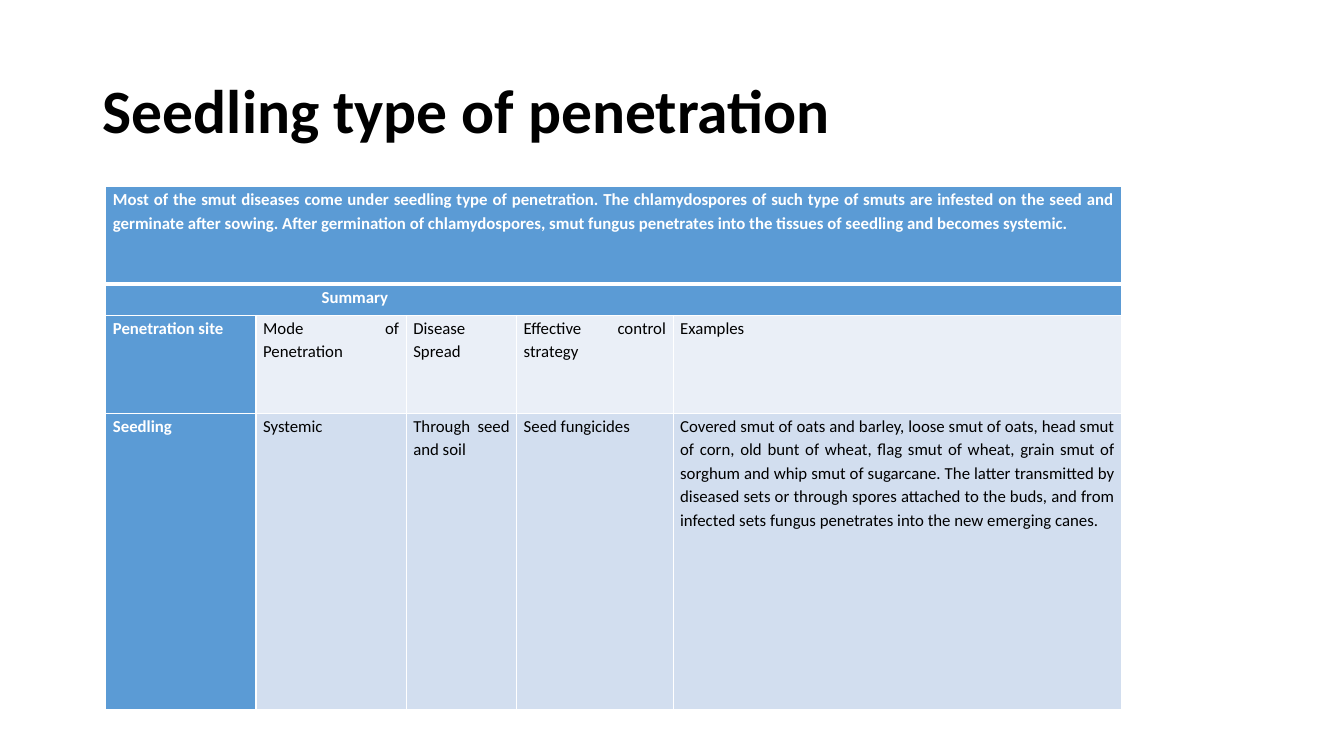
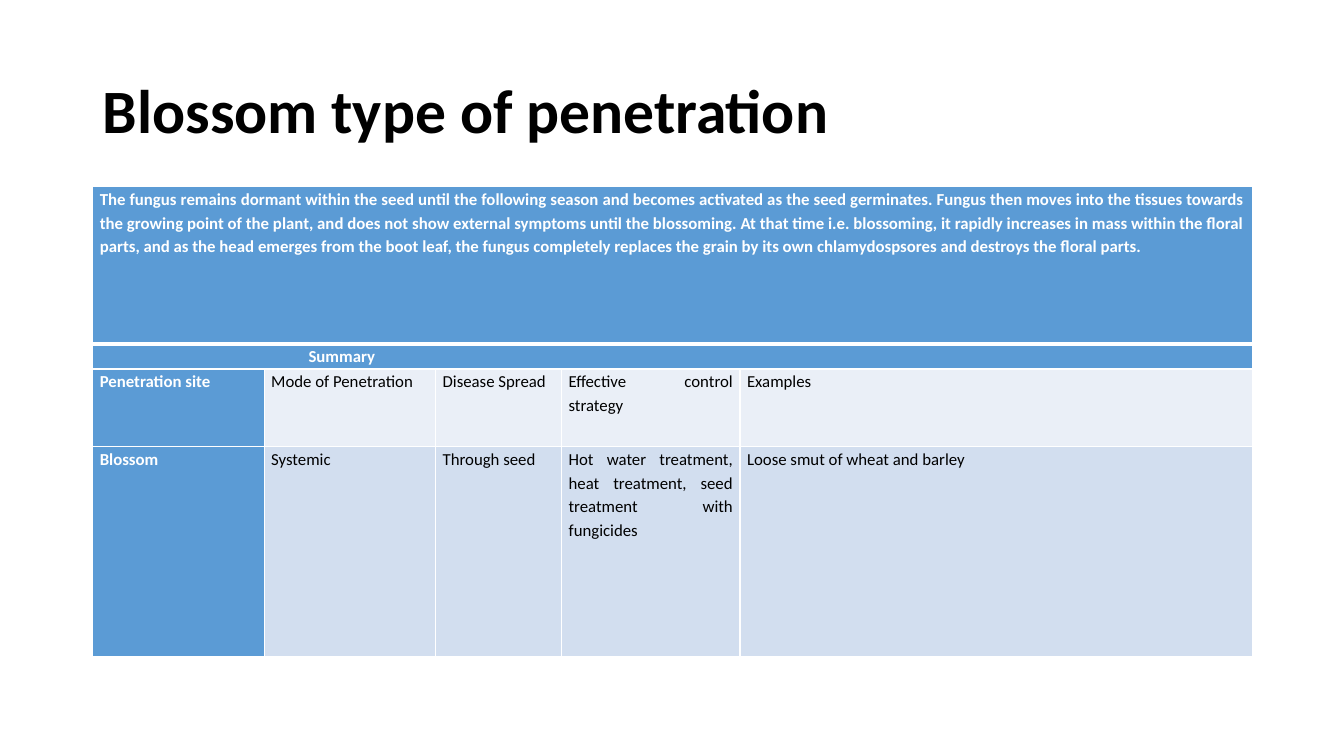
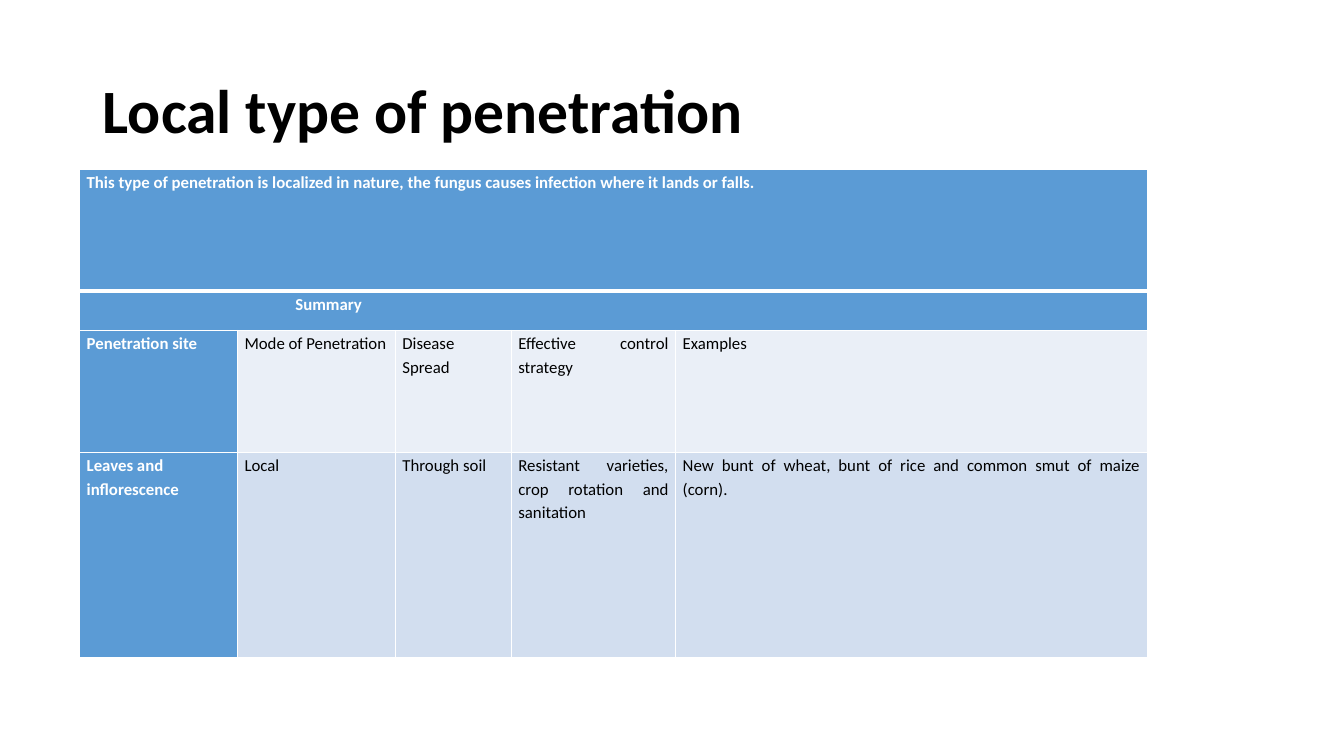
from dataclasses import dataclass

from lxml import etree
from pptx import Presentation
from pptx.dml.color import RGBColor
from pptx.enum import text as t
from pptx.oxml import ns
from pptx.util import Inches, Pt


@dataclass(frozen=True)
class Theme:
    font: str = "Calibri"
    title_size: int = 44
    body_size: int = 12
    dark: str = "000000"
    white: str = "FFFFFF"
    accent: str = "5B9BD5"
    pale: str = "EAEFF7"
    tint: str = "D2DEEF"
    rule: int = 1
    heavy_rule: int = 3


THEME = Theme()
LEFT, JUSTIFY = t.PP_ALIGN.LEFT, t.PP_ALIGN.JUSTIFY
TITLE_AREA = (0.92, 0.4, 11.5, 1.45)
COLUMN_WEIGHTS = (1.7, 1.7, 1.25, 1.77, 5.08)
CELL_INSET = 0.07
SUMMARY_INSET = 2.14
HEADINGS = ("Penetration site", "Mode of Penetration", "Disease Spread",
            "Effective control strategy", "Examples")

# Each topic: title, table area (left, top, width), row heights, intro, findings
TOPICS = (
    ("Seedling type of penetration", (1.05, 1.85, 10.08), (0.97, 0.31, 0.97, 2.94),
     "Most of the smut diseases come under seedling type of penetration. The "
     "chlamydospores of such type of smuts are infested on the seed and germinate "
     "after sowing. After germination of chlamydospores, smut fungus penetrates "
     "into the tissues of seedling and becomes systemic.",
     ("Seedling", "Systemic", "Through seed and soil", "Seed fungicides",
      "Covered smut of oats and barley, loose smut of oats, head smut of corn, old "
      "bunt of wheat, flag smut of wheat, grain smut of sorghum and whip smut of "
      "sugarcane. The latter transmitted by diseased sets or through spores attached "
      "to the buds, and from infected sets fungus penetrates into the new emerging "
      "canes.")),
    ("Blossom type of penetration", (0.92, 1.85, 11.5), (1.56, 0.25, 0.77, 2.08),
     "The fungus remains dormant within the seed until the following season and "
     "becomes activated as the seed germinates. Fungus then moves into the tissues "
     "towards the growing point of the plant, and does not show external symptoms "
     "until the blossoming. At that time i.e. blossoming, it rapidly increases in "
     "mass within the floral parts, and as the head emerges from the boot leaf, the "
     "fungus completely replaces the grain by its own chlamydospsores and destroys "
     "the floral parts.",
     ("Blossom", "Systemic", "Through seed",
      "Hot water treatment, heat treatment, seed treatment with fungicides",
      "Loose smut of wheat and barley")),
    ("Local type of penetration", (0.79, 1.68, 10.59), (1.21, 0.39, 1.21, 2.03),
     "This type of penetration is localized in nature, the fungus causes infection "
     "where it lands or falls.",
     ("Leaves and inflorescence", "Local", "Through soil",
      "Resistant varieties, crop rotation and sanitation",
      "New bunt of wheat, bunt of rice and common smut of maize (corn).")),
)


def write_text(frame, text, size=THEME.body_size, color=THEME.dark, bold=False,
               align=LEFT, spacing=1.15):
    """Fill a text frame with one formatted paragraph."""
    para = frame.paragraphs[0]
    para.alignment = align
    para.line_spacing = spacing
    span = para.add_run()
    span.text = text
    span.font.name = THEME.font
    span.font.size = Pt(size)
    span.font.bold = bold
    span.font.color.rgb = RGBColor.from_string(color)


def add_title(page, text):
    title = page.shapes.title
    title.left, title.top, title.width, title.height = map(Inches, TITLE_AREA)
    title.text_frame.vertical_anchor = t.MSO_ANCHOR.MIDDLE
    write_text(title.text_frame, text, size=THEME.title_size, bold=True, spacing=0.9)


def set_borders(cell, top, bottom):
    """Draw white rules on all four sides of a cell."""
    properties = cell._tc.get_or_add_tcPr()
    sides = {"lnL": THEME.rule, "lnR": THEME.rule, "lnT": top, "lnB": bottom}
    for side, width in sides.items():
        line = etree.SubElement(properties, ns.qn(f"a:{side}"), w=str(Pt(width)))
        fill = etree.SubElement(line, ns.qn("a:solidFill"))
        etree.SubElement(fill, ns.qn("a:srgbClr"), val=THEME.white)


def style_cell(cell, fill, top=THEME.rule, bottom=THEME.rule):
    set_borders(cell, top, bottom)
    cell.fill.solid()
    cell.fill.fore_color.rgb = RGBColor.from_string(fill)
    cell.margin_left = cell.margin_right = Inches(CELL_INSET)
    cell.margin_top = cell.margin_bottom = 0


def add_banner(table, row, text, align=LEFT, inset=CELL_INSET, **rules):
    """Fill a row that spans the whole table."""
    cells = list(table.rows[row].cells)
    cells[0].merge(cells[-1])
    for cell in cells:
        style_cell(cell, THEME.accent, **rules)
    cells[0].margin_left = Inches(inset)
    write_text(cells[0].text_frame, text, color=THEME.white, bold=True, align=align)


def add_record(table, row, values, fill):
    """Fill a row that starts with an accented site cell."""
    for column, value in enumerate(values):
        is_site = column == 0
        cell = table.cell(row, column)
        style_cell(cell, THEME.accent if is_site else fill)
        write_text(cell.text_frame, value, bold=is_site,
                   color=THEME.white if is_site else THEME.dark,
                   align=LEFT if is_site else JUSTIFY)


def add_summary_table(page, area, heights, intro, findings):
    left, top, width = area
    table = page.shapes.add_table(
        len(heights), len(COLUMN_WEIGHTS), Inches(left), Inches(top),
        Inches(width), Inches(sum(heights))).table
    table.first_row = table.horz_banding = False
    for column, weight in zip(table.columns, COLUMN_WEIGHTS):
        column.width = Inches(width * weight / sum(COLUMN_WEIGHTS))
    for row, height in zip(table.rows, heights):
        row.height = Inches(height)

    add_banner(table, 0, intro, align=JUSTIFY, bottom=THEME.heavy_rule)
    add_banner(table, 1, "Summary", inset=SUMMARY_INSET, top=THEME.heavy_rule)
    add_record(table, 2, HEADINGS, THEME.pale)
    add_record(table, 3, findings, THEME.tint)


def main():
    deck = Presentation()
    deck.slide_width, deck.slide_height = Inches(13.33), Inches(7.5)
    title_only = deck.slide_layouts[5]
    for title, area, heights, intro, findings in TOPICS:
        page = deck.slides.add_slide(title_only)
        add_title(page, title)
        add_summary_table(page, area, heights, intro, findings)
    deck.save("out.pptx")


if __name__ == "__main__":
    main()
